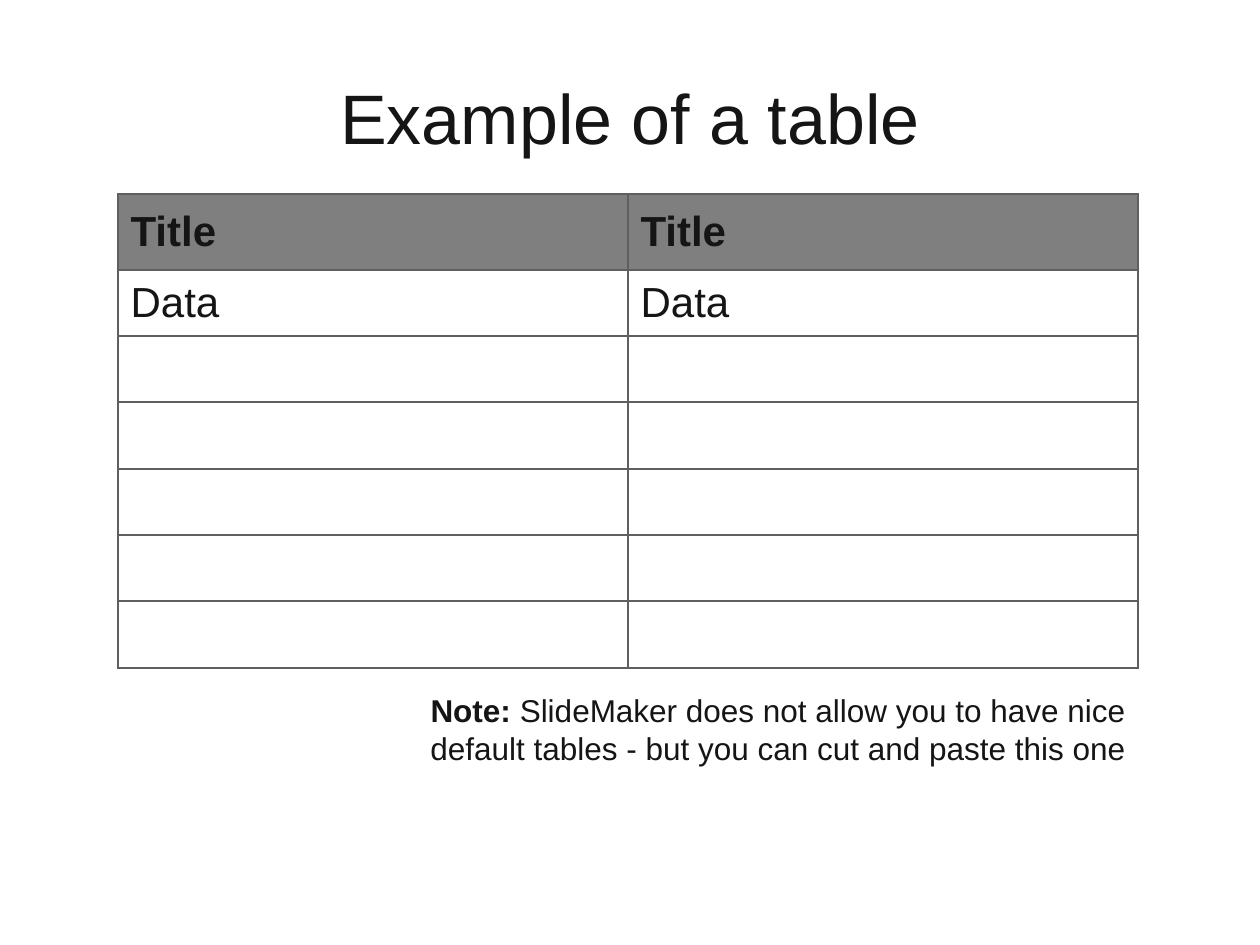
from lxml import etree
from pptx import Presentation
from pptx import util as u
from pptx.dml.color import RGBColor
from pptx.enum import text
from pptx.oxml.ns import qn

PX_PER_INCH = 126
COLORS = {"ink": "151515", "header": "7F7F7F", "border": "5F5F61"}
HEADINGS = ["Title", "Title"]
FIRST_ROW = ["Data", "Data"]
EMPTY_ROWS = 5


def px(length):
    return u.Emu(round(length * u.Inches(1) / PX_PER_INCH))


def color(name):
    return RGBColor.from_string(COLORS[name])


def write(paragraph, words, size=18, bold=False, align=None, font="Arial"):
    """Append a formatted run to the paragraph."""
    run = paragraph.add_run()
    run.text = words
    run.font.name = font
    run.font.size = u.Pt(size)
    run.font.bold = bold
    run.font.color.rgb = color("ink")
    if align is not None:
        paragraph.alignment = align


def add_borders(cell, width=1):
    """Outline all four sides; the lines must come before the cell's fill."""
    properties = cell._tc.get_or_add_tcPr()
    for place, side in enumerate(("a:lnL", "a:lnR", "a:lnT", "a:lnB")):
        line = etree.Element(qn(side), w=str(u.Pt(width)))
        fill = etree.SubElement(line, qn("a:solidFill"))
        etree.SubElement(fill, qn("a:srgbClr"), val=COLORS["border"])
        properties.insert(place, line)


class SlideBuilder:
    def __init__(self, deck):
        self.slide = deck.slides.add_slide(deck.slide_layouts[6])

    def textbox(self, left, top, width, height, anchor=text.MSO_ANCHOR.TOP):
        """Add a wrapping text box and return its first paragraph."""
        frame = self.slide.shapes.add_textbox(
            px(left), px(top), px(width), px(height)).text_frame
        frame.word_wrap = True
        frame.vertical_anchor = anchor
        return frame.paragraphs[0]

    def table(self, left, top, width, row_heights, rows):
        columns = len(rows[0])
        grid = self.slide.shapes.add_table(
            len(rows), columns, px(left), px(top),
            px(width), px(sum(row_heights))).table
        for column in grid.columns:
            column.width = px(width // columns)
        for r, (height, values) in enumerate(zip(row_heights, rows)):
            grid.rows[r].height = px(height)
            for c, value in enumerate(values):
                self.cell(grid.cell(r, c), value, header=r == 0)

    def cell(self, cell, value, header):
        cell.vertical_anchor = text.MSO_ANCHOR.MIDDLE
        if header:
            cell.fill.solid()
            cell.fill.fore_color.rgb = color("header")
        else:
            cell.fill.background()
        add_borders(cell)
        if value:
            write(cell.text_frame.paragraphs[0], value, size=24, bold=header)


def main():
    deck = Presentation()
    deck.slide_width, deck.slide_height = px(1260), px(945)
    builder = SlideBuilder(deck)

    heading = builder.textbox(63, 38, 1134, 158, text.MSO_ANCHOR.MIDDLE)
    write(heading, "Example of a table", size=40, align=text.PP_ALIGN.CENTER)

    rows = [HEADINGS, FIRST_ROW] + [["", ""]] * EMPTY_ROWS
    body_rows = len(rows) - 1
    edges = [398 * i // body_rows for i in range(body_rows + 1)]
    body_heights = [low - high for high, low in zip(edges, edges[1:])]
    builder.table(118, 194, 1020, [76] + body_heights, rows)

    note = builder.textbox(344, 685, 794, 89)
    write(note, "Note: ", bold=True, align=text.PP_ALIGN.RIGHT)
    write(note, "SlideMaker does not allow you to have nice default tables"
                " - but you can cut and paste this one")

    deck.save("out.pptx")


if __name__ == "__main__":
    main()
